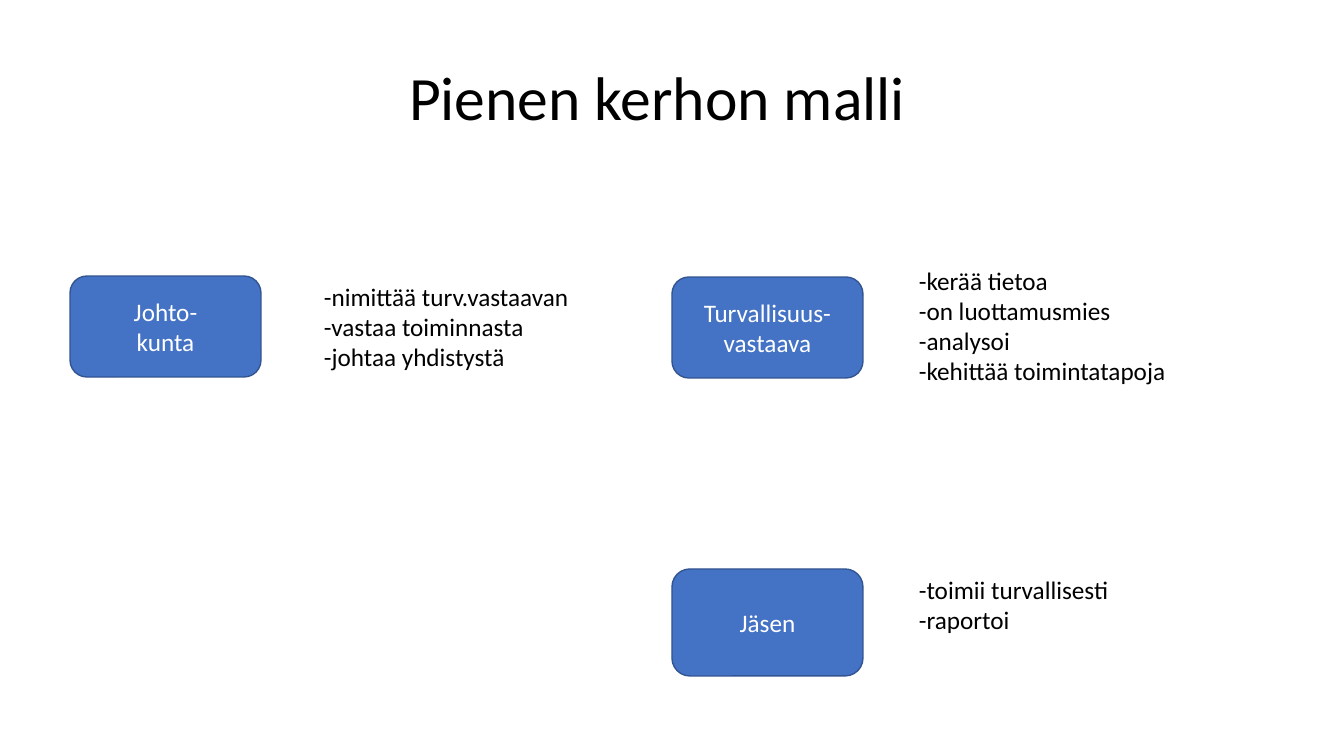
"""Build the slide on the roles of a small club."""
from pptx import Presentation
from pptx.dml.color import RGBColor
from pptx.enum.shapes import MSO_SHAPE as Shape
from pptx.enum.text import MSO_ANCHOR as Anchor, MSO_AUTO_SIZE as AutoSize, PP_ALIGN as Align
from pptx.util import Pt

TITLE = "Pienen kerhon malli"
TITLE_BOX = (399, 47, 544, 107)
ROLES = [
    {"name": "Jäsen", "box": (672, 569, 191, 107),
     "duties": ["-toimii turvallisesti", "-raportoi"],
     "duties_box": (909, 569, 212, 72), "wrap": False},
    {"name": "Turvallisuus-\nvastaava", "box": (672, 277, 191, 101),
     "duties": ["-kerää tietoa", "-on luottamusmies", "-analysoi",
                "-kehittää toimintatapoja"],
     "duties_box": (909, 260, 272, 132), "wrap": True},
    {"name": "Johto-\nkunta", "box": (70, 276, 191, 101),
     "duties": ["-nimittää turv.vastaavan", "-vastaa toiminnasta",
                "-johtaa yhdistystä"],
     "duties_box": (314, 276, 268, 102), "wrap": False},
]

FONT = "Calibri"
BLACK = RGBColor(0x00, 0x00, 0x00)
WHITE = RGBColor(0xFF, 0xFF, 0xFF)
BLUE = RGBColor(0x44, 0x72, 0xC4)
DARK_BLUE = RGBColor(0x32, 0x54, 0x91)
PX = 914400 / 100.8


def emu(lengths):
    """Turn px lengths into EMU."""
    return [round(length * PX) for length in lengths]


def write(frame, text, size, color, align, anchor):
    """Set the text of a frame and format its runs."""
    frame.text = text
    frame.vertical_anchor = anchor
    for paragraph in frame.paragraphs:
        paragraph.alignment = align
        for run in paragraph.runs:
            run.font.name = FONT
            run.font.size = Pt(size)
            run.font.color.rgb = color


def add_role(shapes, role):
    """Draw the box of a role and the list of its duties."""
    box = shapes.add_shape(Shape.ROUNDED_RECTANGLE, *emu(role["box"]))
    box.shadow.inherit = False
    box.fill.solid()
    box.fill.fore_color.rgb = BLUE
    box.line.color.rgb = DARK_BLUE
    box.line.width = Pt(1)
    write(box.text_frame, role["name"], 18, WHITE, Align.CENTER, Anchor.MIDDLE)

    duties = shapes.add_textbox(*emu(role["duties_box"])).text_frame
    duties.word_wrap = role["wrap"]
    duties.auto_size = AutoSize.SHAPE_TO_FIT_TEXT
    write(duties, "\n".join(role["duties"]), 18, BLACK, Align.LEFT, Anchor.TOP)


def main():
    """Build and save the slide."""
    deck = Presentation()
    deck.slide_width, deck.slide_height = emu((1344, 756))
    slide = deck.slides.add_slide(deck.slide_layouts[5])
    title = slide.shapes.title
    title.left, title.top, title.width, title.height = emu(TITLE_BOX)
    write(title.text_frame, TITLE, 44, BLACK, Align.LEFT, Anchor.MIDDLE)
    title.text_frame.paragraphs[0].line_spacing = 0.9
    for role in ROLES:
        add_role(slide.shapes, role)
    deck.save("out.pptx")


if __name__ == "__main__":
    main()
